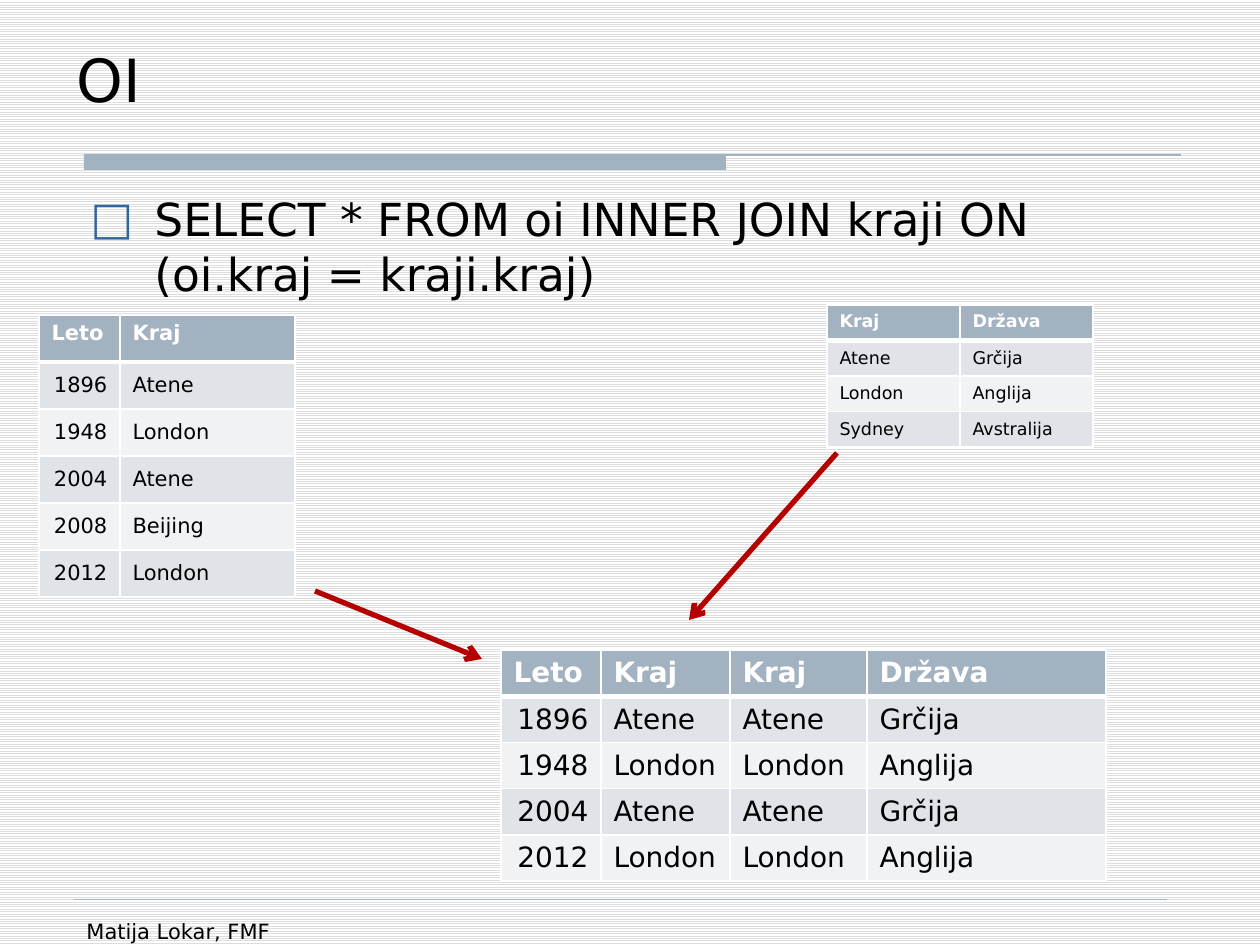
import dataclasses

import lxml.etree
import pptx
import pptx.dml.color
import pptx.enum.dml
import pptx.enum.shapes
import pptx.enum.text
import pptx.oxml
import pptx.oxml.ns
import pptx.util

PX = 914400 / 126
qn = pptx.oxml.ns.qn
RGB = pptx.dml.color.RGBColor.from_string
ANCHOR = pptx.enum.text.MSO_ANCHOR
ALIGN = pptx.enum.text.PP_ALIGN


def px(n):
    return pptx.util.Emu(round(n * PX))


@dataclasses.dataclass(frozen=True)
class Theme:
    font: str = "DejaVu Sans"
    text: str = "000000"
    paper: str = "FFFFFF"
    stripe: str = "DDDDDD"
    accent: str = "A3B2C1"
    bands: tuple = ("E0E4E9", "F0F2F4")
    bullet: str = "336699"
    arrow: str = "B50000"
    title_size: int = 34
    body_size: int = 26
    small_size: int = 12


class Deck:
    def __init__(self, theme):
        self.theme = theme
        self.prs = pptx.Presentation()
        self.prs.slide_width, self.prs.slide_height = px(1260), px(945)
        self.s = self.prs.slides.add_slide(self.prs.slide_layouts[6])
        fill = self.s.background.fill
        fill.patterned()
        fill.pattern = pptx.enum.dml.MSO_PATTERN.LIGHT_HORIZONTAL
        fill.fore_color.rgb = RGB(theme.stripe)
        fill.back_color.rgb = RGB(theme.paper)

    def style(self, p, size, color, bold=False):
        p.font.name = self.theme.font
        p.font.size = pptx.util.Pt(size)
        p.font.bold = bold
        p.font.color.rgb = RGB(color)

    def text(self, x, y, w, h, text, size, anchor=ANCHOR.TOP):
        tf = self.s.shapes.add_textbox(px(x), px(y), px(w), px(h)).text_frame
        tf.word_wrap = True
        tf.vertical_anchor = anchor
        p = tf.paragraphs[0]
        p.text = text
        self.style(p, size, self.theme.text)
        return p

    def bullet(self, x, y, w, h, text, size, indent):
        pPr = self.text(x, y, w, h, text, size)._p.get_or_add_pPr()
        pPr.set("marL", str(px(indent)))
        pPr.set("indent", str(-px(indent)))
        parts = pptx.oxml.parse_xml(
            f'<a:pPr {pptx.oxml.ns.nsdecls("a")}>'
            '<a:spcBef><a:spcPct val="20000"/></a:spcBef>'
            f'<a:buClr><a:srgbClr val="{self.theme.bullet}"/></a:buClr>'
            f'<a:buFont typeface="{self.theme.font}"/><a:buChar char="□"/></a:pPr>')
        for i, part in enumerate(list(parts)):
            pPr.insert(i, part)

    def bar(self, x, y, w, h, color):
        sp = self.s.shapes.add_shape(
            pptx.enum.shapes.MSO_SHAPE.RECTANGLE, px(x), px(y), px(w), px(h))
        sp.shadow.inherit = False
        sp.fill.solid()
        sp.fill.fore_color.rgb = RGB(color)
        sp.line.fill.background()

    def line(self, x1, y1, x2, y2, color, width, arrow=False):
        c = self.s.shapes.add_connector(
            pptx.enum.shapes.MSO_CONNECTOR.STRAIGHT, px(x1), px(y1), px(x2), px(y2))
        c.line.color.rgb = RGB(color)
        c.line.width = pptx.util.Pt(width)
        if arrow:
            lxml.etree.SubElement(c.line._get_or_add_ln(), qn("a:tailEnd"), type="arrow")
        lxml.etree.SubElement(c._element.spPr, qn("a:effectLst"))

    def borders(self, cell, top, bottom):
        tcPr = cell._tc.get_or_add_tcPr()
        for i, (side, width) in enumerate(zip("LRTB", (1, 1, top, bottom))):
            tcPr.insert(i, pptx.oxml.parse_xml(
                f'<a:ln{side} {pptx.oxml.ns.nsdecls("a")} w="{pptx.util.Pt(width)}">'
                f'<a:solidFill><a:srgbClr val="{self.theme.paper}"/></a:solidFill></a:ln{side}>'))

    def table(self, x, y, h, widths, size, rows):
        t = self.theme
        tbl = self.s.shapes.add_table(
            len(rows), len(widths), px(x), px(y), px(sum(widths)), px(h)).table
        for col, width in zip(tbl.columns, widths):
            col.width = px(width)
        for i, row in enumerate(rows):
            header = i == 0
            for j, value in enumerate(row):
                cell = tbl.cell(i, j)
                cell.text = value
                cell.vertical_anchor = ANCHOR.TOP if header else ANCHOR.MIDDLE
                cell.fill.solid()
                cell.fill.fore_color.rgb = RGB(t.accent if header else t.bands[(i - 1) % 2])
                p = cell.text_frame.paragraphs[0]
                p.alignment = ALIGN.RIGHT if value.isdigit() else ALIGN.LEFT
                self.style(p, size, t.paper if header else t.text, header)
                self.borders(cell, 3 if i == 1 else 1, 3 if header else 1)


def main():
    t = Theme()
    d = Deck(t)
    d.bar(84, 155, 642, 15, t.accent)
    d.line(84, 155, 1181, 155, t.accent, 0.75)
    d.line(74, 899, 1167, 899, t.accent, 0.25)
    d.text(64, 26, 1103, 95, "OI", t.title_size, ANCHOR.BOTTOM)
    d.bullet(78, 185, 1103, 694,
             "SELECT * FROM oi INNER JOIN kraji ON (oi.kraj = kraji.kraj)", t.body_size, 64)

    games = [("1896", "Atene"), ("1948", "London"), ("2004", "Atene"),
             ("2008", "Beijing"), ("2012", "London")]
    countries = {"Atene": "Grčija", "London": "Anglija", "Sydney": "Avstralija"}
    joined = [(year, city, city, countries[city]) for year, city in games if city in countries]

    d.table(39, 315, 282, (81, 175), 12, [("Leto", "Kraj"), *games])
    d.text(74, 912, 273, 66, "Matija Lokar, FMF", t.small_size)
    d.table(827, 305, 142, (133, 133), 10, [("Kraj", "Država"), *countries.items()])
    d.table(501, 650, 225, (100, 129, 137, 239), 16,
            [("Leto", "Kraj", "Kraj", "Država"), *joined])
    d.line(315, 591, 482, 659, t.arrow, 3, arrow=True)
    d.line(837, 453, 689, 620, t.arrow, 3, arrow=True)
    d.prs.save("out.pptx")


if __name__ == "__main__":
    main()
